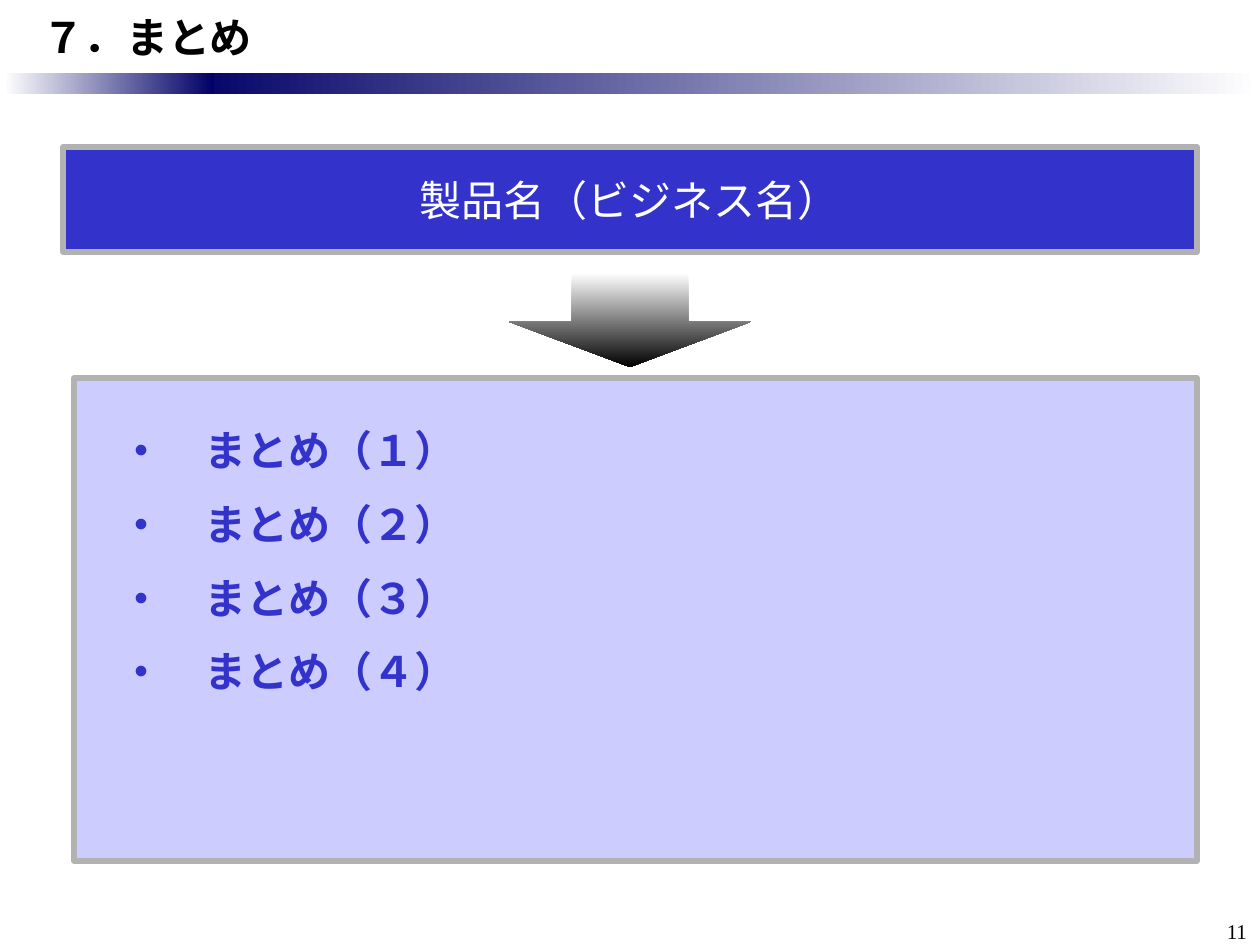
"""Build the summary slide: product name, arrow and summary points."""
from dataclasses import dataclass

from lxml import etree
from pptx import Presentation, util as u
from pptx.dml.color import RGBColor
from pptx.enum import shapes, text
from pptx.oxml import ns

TITLE = "７．まとめ"
PRODUCT = "製品名（ビジネス名）"
POINTS = [f"・　まとめ（{number}）" for number in "１２３４"]
PAGE = "11"

SLIDE = (1260, 945)
TITLE_BOX = (0, 0, 1260, 73)
PRODUCT_BOX = (63, 147, 1134, 105)
ARROW_BOX = (583, 199, 94, 242)
POINTS_BOX = (74, 378, 1123, 483)
PAGE_BOX = (1187, 913, 73, 32)


@dataclass(frozen=True)
class Theme:
    """Colours, fonts and type sizes."""
    navy: str = "000066"
    blue: str = "3333CC"
    pale: str = "CCCCFF"
    grey: str = "B2B2B2"
    white: str = "FFFFFF"
    black: str = "000000"
    sans: str = "Noto Sans CJK JP"
    serif: str = "Times New Roman"
    large: int = 24
    small: int = 12
    gap: float = 13.2
    border: int = 3


THEME = Theme()
BARS = [
    ((179, 73, 1081, 21), (THEME.navy, THEME.white)),
    ((4, 73, 210, 21), (THEME.white, THEME.navy)),
]


def px(value):
    """Turn px into EMU."""
    return u.Emu(round(value * 914400 / 126))


def place(box):
    """Turn a box in px into EMU lengths."""
    return [px(value) for value in box]


def write(shape, lines, color=THEME.black, size=THEME.large, font=THEME.sans,
          bold=False, align=text.PP_ALIGN.LEFT, anchor=text.MSO_ANCHOR.MIDDLE,
          insets=(13, 6, 13, 6), after=0):
    """Write one paragraph per line in one format."""
    frame = shape.text_frame
    frame.word_wrap = True
    frame.vertical_anchor = anchor
    (frame.margin_left, frame.margin_top,
     frame.margin_right, frame.margin_bottom) = place(insets)
    for index, line in enumerate(lines):
        paragraph = frame.add_paragraph() if index else frame.paragraphs[0]
        paragraph.alignment = align
        paragraph.space_before = u.Pt(0)
        paragraph.space_after = u.Pt(after)
        run = paragraph.add_run()
        run.text = line
        run.font.size = u.Pt(size)
        run.font.bold = bold
        run.font.name = font
        run.font.color.rgb = RGBColor.from_string(color)
        east_asian = etree.SubElement(run.font._element, ns.qn("a:ea"))
        east_asian.set("typeface", font)


def add_shape(slide, kind, box, colors, line=None):
    """Add a shape with a solid fill or a two-colour gradient."""
    shape = slide.shapes.add_shape(kind, *place(box))
    shape.shadow.inherit = False
    if len(colors) == 1:
        shape.fill.solid()
        shape.fill.fore_color.rgb = RGBColor.from_string(colors[0])
    else:
        shape.fill.gradient()
        shape.fill.gradient_angle = 0
        for position, (stop, color) in enumerate(zip(shape.fill.gradient_stops, colors)):
            stop.position = position
            stop.color.rgb = RGBColor.from_string(color)
    if line:
        shape.line.color.rgb = RGBColor.from_string(line)
        shape.line.width = u.Pt(THEME.border)
    else:
        shape.line.fill.background()
    return shape


def main():
    presentation = Presentation()
    presentation.slide_width, presentation.slide_height = place(SLIDE)
    slide = presentation.slides.add_slide(presentation.slide_layouts[5])
    rectangle = shapes.MSO_SHAPE.RECTANGLE

    for box, colors in BARS:
        add_shape(slide, rectangle, box, colors)

    page = slide.shapes.add_textbox(*place(PAGE_BOX))
    write(page, [PAGE], size=THEME.small, font=THEME.serif,
          align=text.PP_ALIGN.RIGHT, anchor=text.MSO_ANCHOR.TOP)

    title = slide.shapes.title
    title.left, title.top, title.width, title.height = place(TITLE_BOX)
    write(title, [TITLE], bold=True, insets=(42, 6, 13, 6))

    arrow = add_shape(slide, shapes.MSO_SHAPE.RIGHT_ARROW, ARROW_BOX,
                      (THEME.white, THEME.black))
    arrow.width, arrow.height = px(ARROW_BOX[2]), px(ARROW_BOX[3])
    arrow.rotation = 90
    arrow.adjustments[0] = arrow.adjustments[1] = 0.48

    points = add_shape(slide, rectangle, POINTS_BOX, [THEME.pale], THEME.grey)
    write(points, POINTS, color=THEME.blue, bold=True, after=THEME.gap,
          anchor=text.MSO_ANCHOR.TOP, insets=(47, 47, 13, 6))

    product = add_shape(slide, rectangle, PRODUCT_BOX, [THEME.blue], THEME.grey)
    write(product, [PRODUCT], color=THEME.white, align=text.PP_ALIGN.CENTER)

    presentation.save("out.pptx")


if __name__ == "__main__":
    main()
